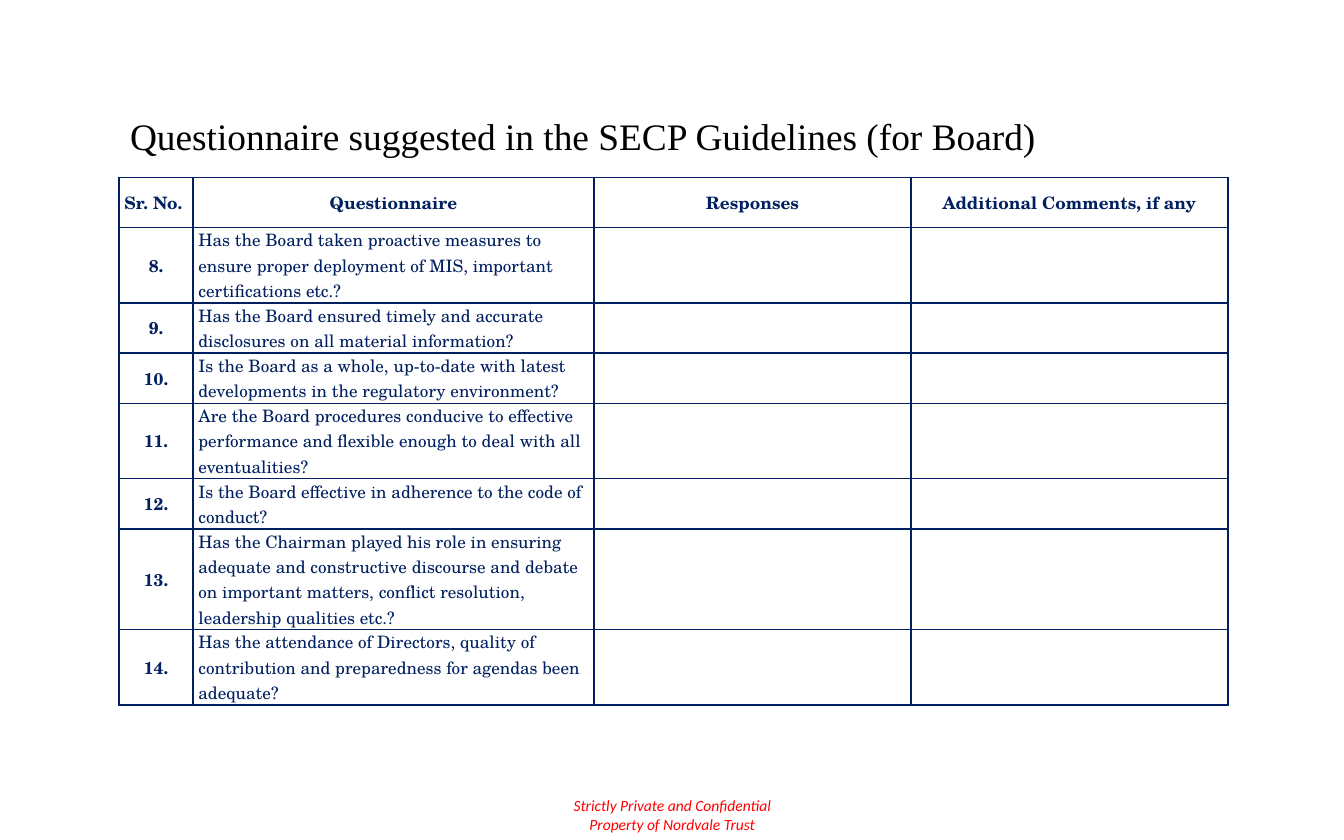
import pptx
import pptx.dml.color
import pptx.enum.text
import pptx.oxml
import pptx.oxml.ns
import pptx.util
from dataclasses import dataclass

Cm = pptx.util.Cm
Pt = pptx.util.Pt
Align = pptx.enum.text.PP_ALIGN
Anchor = pptx.enum.text.MSO_ANCHOR


@dataclass(frozen=True)
class Theme:
    navy: str = "002060"
    black: str = "000000"
    red: str = "FF0000"
    title_font: str = "Times New Roman"
    table_font: str = "TeX Gyre Schola"
    footer_font: str = "Calibri"
    title_size: int = 24
    table_size: int = 11
    footer_size: int = 10
    border_width: int = 1


THEME = Theme()
LINE_HEIGHT = 0.57

HEADINGS = ["Sr. No.", "Questionnaire", "Responses", "Additional Comments, if any"]
COLUMN_WIDTHS = [1.68, 9.09, 7.19, 7.19]
FIRST_NUMBER = 8
QUESTIONS = [
    ("Has the Board taken proactive measures to ensure proper deployment of MIS, "
     "important certifications etc.?", 3),
    ("Has the Board ensured timely and accurate disclosures on all material information?", 2),
    ("Is the Board as a whole, up-to-date with latest developments in the regulatory "
     "environment?", 2),
    ("Are the Board procedures conducive to effective performance and flexible enough "
     "to deal with all eventualities?", 3),
    ("Is the Board effective in adherence to the code of conduct?", 2),
    ("Has the Chairman played his role in ensuring adequate and constructive discourse "
     "and debate on important matters, conflict resolution, leadership qualities etc.?", 4),
    ("Has the attendance of Directors, quality of contribution and preparedness for "
     "agendas been adequate?", 3),
]
FOOTER_LINES = ["Strictly Private and Confidential", "Property of Nordvale Trust"]


def add_run(paragraph, text, font, size, color, bold=False, italic=False):
    run = paragraph.add_run()
    run.text = text
    run.font.name = font
    run.font.size = Pt(size)
    run.font.bold = bold
    run.font.italic = italic
    run.font.color.rgb = pptx.dml.color.RGBColor.from_string(color)


def add_title(slide, left, top, width, height):
    frame = slide.shapes.add_textbox(left, top, width, height).text_frame
    frame.word_wrap = True
    title = frame.paragraphs[0]
    title.line_spacing = 0.9
    add_run(title, "Questionnaire suggested in the SECP Guidelines (for Board)",
            THEME.title_font, THEME.title_size, THEME.black)


def add_borders(cell):
    properties = cell._tc.get_or_add_tcPr()
    for position, side in enumerate(["lnL", "lnR", "lnT", "lnB"]):
        border = pptx.oxml.parse_xml(
            f'<a:{side} {pptx.oxml.ns.nsdecls("a")} w="{Pt(THEME.border_width)}">'
            f'<a:solidFill><a:srgbClr val="{THEME.navy}"/></a:solidFill></a:{side}>')
        properties.insert(position, border)


def fill_cell(cell, text, bold, alignment):
    cell.fill.background()
    add_borders(cell)
    cell.vertical_anchor = Anchor.MIDDLE
    cell.margin_left = cell.margin_right = Cm(0.12)
    cell.margin_top = cell.margin_bottom = 0
    entry = cell.text_frame.paragraphs[0]
    entry.alignment = alignment
    if text:
        add_run(entry, text, THEME.table_font, THEME.table_size, THEME.navy, bold)


def add_questionnaire(slide, left, top, width, height):
    table = slide.shapes.add_table(
        len(QUESTIONS) + 1, len(HEADINGS), left, top, width, height).table
    table.first_row = table.horz_banding = False
    for column, column_width in zip(table.columns, COLUMN_WIDTHS):
        column.width = Cm(column_width)
    line_counts = [2] + [lines for _, lines in QUESTIONS]
    for row, lines in zip(table.rows, line_counts):
        row.height = Cm(lines * LINE_HEIGHT)
    for column, heading in enumerate(HEADINGS):
        fill_cell(table.cell(0, column), heading, True,
                  Align.CENTER if column else Align.LEFT)
    for row, (question, _) in enumerate(QUESTIONS, 1):
        entries = [f"{FIRST_NUMBER + row - 1}.", question, "", ""]
        for column, text in enumerate(entries):
            fill_cell(table.cell(row, column), text, column == 0,
                      Align.LEFT if column else Align.CENTER)


def add_footer(slide, left, top, width, height):
    frame = slide.shapes.add_textbox(left, top, width, height).text_frame
    frame.word_wrap = False
    for index, text in enumerate(FOOTER_LINES):
        notice = frame.add_paragraph() if index else frame.paragraphs[0]
        notice.alignment = Align.CENTER
        add_run(notice, text, THEME.footer_font, THEME.footer_size, THEME.red, italic=True)


def main():
    deck = pptx.Presentation()
    deck.slide_width = Cm(30.48)
    deck.slide_height = Cm(19.05)
    slide = deck.slides.add_slide(deck.slide_layouts[6])
    add_footer(slide, Cm(12.73), Cm(17.93), Cm(5.03), Cm(1.12))
    add_title(slide, Cm(2.7), Cm(2.56), Cm(23.65), Cm(1.47))
    add_questionnaire(slide, Cm(2.7), Cm(4.02), Cm(25.15), Cm(12.06))
    deck.save("out.pptx")


if __name__ == "__main__":
    main()
